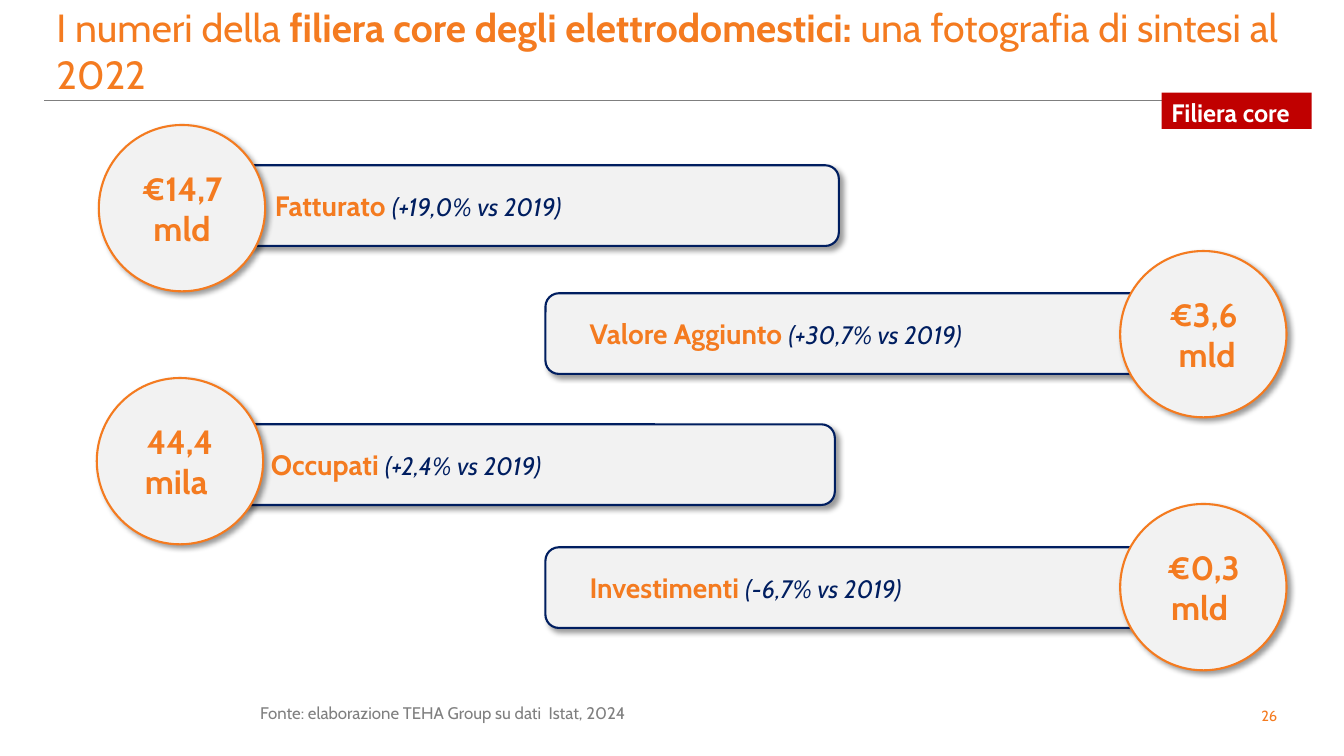
from typing import NamedTuple

from lxml import etree
from pptx import Presentation
from pptx.dml.color import RGBColor
from pptx.enum.shapes import MSO_CONNECTOR, MSO_SHAPE
from pptx.enum.text import MSO_ANCHOR, PP_ALIGN
from pptx.oxml import parse_xml
from pptx.oxml.ns import nsdecls, qn
from pptx.util import Pt

PX = 9144
FONT = "Cabin"
ORANGE = RGBColor(0xF4, 0x7B, 0x20)
NAVY = RGBColor(0x00, 0x1E, 0x60)
PALE_GRAY = RGBColor(0xF2, 0xF2, 0xF2)
RED = RGBColor(0xC0, 0x00, 0x00)
WHITE = RGBColor(0xFF, 0xFF, 0xFF)
GRAY = RGBColor(0x7F, 0x7F, 0x7F)
CIRCLE_SIZE = 165
BAR_HEIGHT = 80
SHADOW = (
    f'<a:effectLst {nsdecls("a")}><a:outerShdw blurRad="50800" dist="38100" dir="2700000" '
    'algn="tl" rotWithShape="0"><a:srgbClr val="000000"><a:alpha val="40000"/></a:srgbClr>'
    "</a:outerShdw></a:effectLst>"
)


class Box(NamedTuple):
    left: int
    top: int
    width: int
    height: int

    def emu(self):
        return [value * PX for value in self]


class Indicator(NamedTuple):
    box: Box
    bar_left: int
    bar_top: int
    bar_width: int
    circle_on_right: bool
    value: str
    label: str
    change: str


INDICATORS = [
    Indicator(Box(98, 124, 734, 165), 83, 40, 651, False,
              "€14,7\n mld ", "Fatturato ", "(+19,0% vs 2019)"),
    Indicator(Box(541, 249, 735, 165), 0, 42, 611, True,
              "€3,6\n mld", "Valore Aggiunto ", "(+30,7% vs 2019)"),
    Indicator(Box(96, 375, 732, 165), 81, 46, 651, False,
              "44,4\nmila ", "Occupati ", "(+2,4% vs 2019)"),
    Indicator(Box(541, 500, 735, 165), 0, 43, 680, True,
              "€0,3 mld ", "Investimenti ", "(-6,7% vs 2019)"),
]


def style_paragraph(paragraph, size, color, bold=None, align=PP_ALIGN.LEFT):
    paragraph.alignment = align
    font = paragraph.font
    font.name, font.size, font.bold = FONT, Pt(size), bold
    font.color.rgb = color


def add_run(paragraph, text, size, color, bold=False, italic=False):
    run = paragraph.add_run()
    run.text = text
    font = run.font
    font.name, font.size, font.bold, font.italic = FONT, Pt(size), bold, italic
    font.color.rgb = color


def add_text_box(slide, box, anchor=MSO_ANCHOR.TOP):
    frame = slide.shapes.add_textbox(*box.emu()).text_frame
    frame.word_wrap = True
    frame.vertical_anchor = anchor
    return frame


def add_card(shapes, preset, box, outline):
    shape = shapes.add_shape(preset, *box.emu())
    shape.fill.solid()
    shape.fill.fore_color.rgb = PALE_GRAY
    shape.line.color.rgb = outline
    shape.line.width = Pt(1.5)
    shape._element.spPr.append(parse_xml(SHADOW))
    frame = shape.text_frame
    frame.word_wrap = True
    frame.vertical_anchor = MSO_ANCHOR.MIDDLE
    return frame


def add_indicator(slide, indicator):
    box = indicator.box
    shapes = slide.shapes.add_group_shape().shapes
    bar_box = Box(box.left + indicator.bar_left, box.top + indicator.bar_top,
                  indicator.bar_width, BAR_HEIGHT)
    bar = add_card(shapes, MSO_SHAPE.ROUNDED_RECTANGLE, bar_box, NAVY)
    paragraph = bar.paragraphs[0]
    paragraph.alignment = PP_ALIGN.LEFT
    indent = 30 if indicator.circle_on_right else 78
    paragraph._p.get_or_add_pPr().set("marL", str(indent * PX))
    add_run(paragraph, indicator.label, 20, ORANGE, bold=True)
    add_run(paragraph, indicator.change, 18, NAVY, italic=True)

    offset = box.width - CIRCLE_SIZE if indicator.circle_on_right else 0
    circle_box = Box(box.left + offset, box.top, CIRCLE_SIZE, CIRCLE_SIZE)
    circle = add_card(shapes, MSO_SHAPE.OVAL, circle_box, ORANGE)
    circle.margin_left = circle.margin_right = 0
    circle.text = indicator.value
    for paragraph in circle.paragraphs:
        style_paragraph(paragraph, 24, ORANGE, True, PP_ALIGN.CENTER)


def add_header(slide, box):
    rule_top = (box.top + 100) * PX
    rule = slide.shapes.add_connector(
        MSO_CONNECTOR.STRAIGHT, (box.left - 2) * PX, rule_top,
        (box.left + box.width + 2) * PX, rule_top)
    rule.line.color.rgb = GRAY
    rule.line.width = Pt(0.75)
    etree.SubElement(rule._element.spPr, qn("a:effectLst"))

    paragraph = add_text_box(slide, box, MSO_ANCHOR.MIDDLE).paragraphs[0]
    add_run(paragraph, "I numeri della ", 28, ORANGE)
    add_run(paragraph, "filiera core degli elettrodomestici: ", 28, ORANGE, bold=True)
    add_run(paragraph, "una fotografia di sintesi al 2022", 28, ORANGE)


def add_tag(slide, box):
    tag = slide.shapes.add_shape(MSO_SHAPE.RECTANGLE, *box.emu())
    tag.shadow.inherit = False
    tag.fill.solid()
    tag.fill.fore_color.rgb = RED
    tag.line.fill.background()
    frame = tag.text_frame
    frame.word_wrap = True
    frame.vertical_anchor = MSO_ANCHOR.TOP
    frame.text = "Filiera core"
    style_paragraph(frame.paragraphs[0], 18, WHITE, True)


def add_footer(slide, box):
    source = add_text_box(slide, Box(box.left, box.top, 865, 32))
    source.margin_left = source.margin_right = 11 * PX
    source.margin_top = source.margin_bottom = 6 * PX
    source.text = "Fonte: elaborazione TEHA Group su dati  Istat, 2024"
    style_paragraph(source.paragraphs[0], 12, GRAY)

    number_box = Box(box.left + box.width - 46, box.top + 5, 46, 29)
    number = add_text_box(slide, number_box)
    number.text = "26"
    style_paragraph(number.paragraphs[0], 10.5, ORANGE, align=PP_ALIGN.CENTER)


def main():
    presentation = Presentation()
    presentation.slide_width = 1333 * PX
    presentation.slide_height = 750 * PX
    slide = presentation.slides.add_slide(presentation.slide_layouts[6])
    add_header(slide, Box(46, 0, 1241, 99))
    for indicator in INDICATORS:
        add_indicator(slide, indicator)
    add_tag(slide, Box(1152, 92, 149, 36))
    add_footer(slide, Box(247, 691, 1035, 34))
    presentation.save("out.pptx")


if __name__ == "__main__":
    main()
